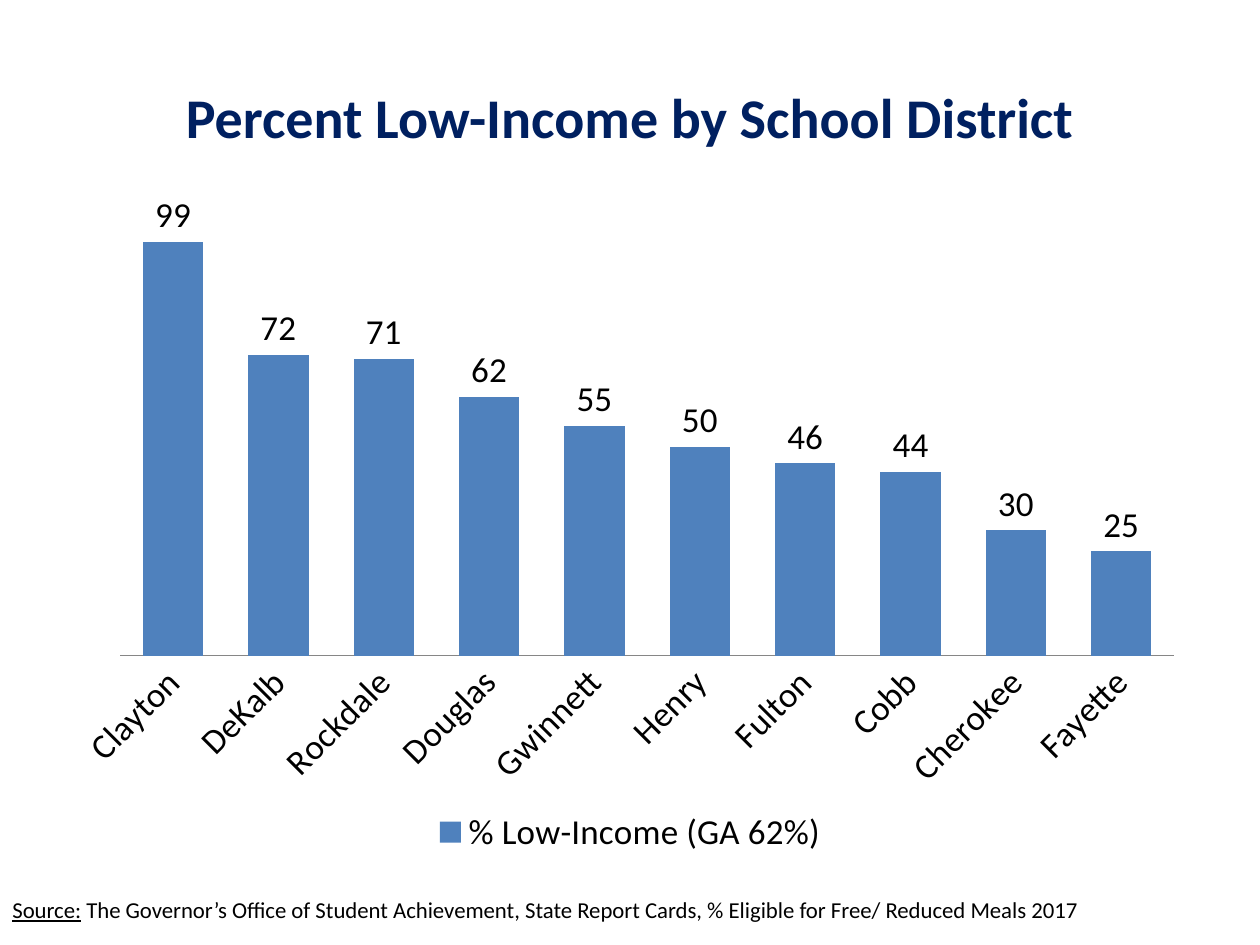
from lxml import etree
from pptx import Presentation
from pptx.chart.data import CategoryChartData
from pptx.dml.color import RGBColor
from pptx.enum.chart import (XL_CHART_TYPE as ChartType, XL_LABEL_POSITION as LabelPos,
                             XL_LEGEND_POSITION as LegendPos, XL_TICK_MARK as TickMark)
from pptx.enum.text import MSO_ANCHOR as Anchor, MSO_AUTO_SIZE as AutoSize, PP_ALIGN as Align
from pptx.oxml import parse_xml
from pptx.oxml.ns import nsdecls, qn
from pptx.util import Pt

NAVY = RGBColor(0x00, 0x20, 0x60)
BLACK = RGBColor(0x00, 0x00, 0x00)
BLUE = RGBColor(0x4F, 0x81, 0xBD)
GRAY = RGBColor(0x86, 0x86, 0x86)
FONT = "Calibri"

LOW_INCOME = {
    "Clayton": 99, "DeKalb": 72, "Rockdale": 71, "Douglas": 62, "Gwinnett": 55,
    "Henry": 50, "Fulton": 46, "Cobb": 44, "Cherokee": 30, "Fayette": 25,
}


def style_font(font, size, color=BLACK, bold=False, underline=False):
    font.name, font.size, font.bold = FONT, Pt(size), bold
    font.color.rgb = color
    if underline:
        font.underline = True


def add_text(slide, box, *runs, align=Align.LEFT, anchor=Anchor.TOP,
             spacing=None, autosize=AutoSize.NONE):
    """Each run is a pair: its text and its font format."""
    frame = slide.shapes.add_textbox(*map(Pt, box)).text_frame
    frame.word_wrap = True
    frame.auto_size = autosize
    frame.vertical_anchor = anchor
    paragraph = frame.paragraphs[0]
    paragraph.alignment = align
    paragraph.line_spacing = spacing
    for text, style in runs:
        run = paragraph.add_run()
        run.text = text
        style_font(run.font, **style)


def add_title(slide, box):
    add_text(slide, box,
             ("Percent Low-Income by School District", dict(size=32, color=NAVY, bold=True)),
             align=Align.CENTER, anchor=Anchor.MIDDLE)


def add_source(slide, box):
    add_text(slide, box,
             ("Source:", dict(size=13, underline=True)),
             (" The Governor’s Office of Student Achievement, State Report Cards, "
              "% Eligible for Free/ Reduced Meals 2017", dict(size=13)),
             spacing=0.6, autosize=AutoSize.SHAPE_TO_FIT_TEXT)


def set_plot_area(chart, x, y, w, h):
    """Fix the inner plot area, in fractions of the chart."""
    plot_area = chart.plots[0]._element.getparent()
    for layout in plot_area.findall(qn("c:layout")):
        plot_area.remove(layout)
    layout = parse_xml(f"<c:layout {nsdecls('c')}><c:manualLayout/></c:layout>")
    settings = dict(layoutTarget="inner", xMode="edge", yMode="edge", x=x, y=y, w=w, h=h)
    for name, value in settings.items():
        etree.SubElement(layout[0], qn(f"c:{name}")).set("val", str(value))
    plot_area.insert(0, layout)


def add_district_chart(slide, box):
    table = CategoryChartData(number_format="0")
    table.categories = list(LOW_INCOME)
    table.add_series("% Low-Income (GA 62%)", list(LOW_INCOME.values()))
    chart = slide.shapes.add_chart(ChartType.COLUMN_CLUSTERED, *map(Pt, box), table).chart
    chart.has_title = False
    style_font(chart.font, 20)
    set_plot_area(chart, 0.036, 0, 0.959, 0.71)

    # Columns and their values
    plot = chart.plots[0]
    plot.gap_width = 75
    plot.vary_by_categories = False
    fill = plot.series[0].format.fill
    fill.solid()
    fill.fore_color.rgb = BLUE
    plot.has_data_labels = True
    labels = plot.data_labels
    labels.show_value = True
    labels.number_format, labels.number_format_is_linked = "0", False
    labels.position = LabelPos.OUTSIDE_END
    style_font(labels.font, 20)

    # Axes
    districts, percent = chart.category_axis, chart.value_axis
    districts.major_tick_mark = TickMark.NONE
    districts.format.line.color.rgb = GRAY
    style_font(districts.tick_labels.font, 20)
    districts.tick_labels._element.txPr.bodyPr.set("rot", str(-45 * 60000))
    percent.minimum_scale, percent.maximum_scale = 0, 120
    percent.has_major_gridlines = False
    percent.visible = False

    # Legend
    chart.has_legend = True
    chart.legend.position = LegendPos.BOTTOM
    chart.legend.include_in_layout = False
    style_font(chart.legend.font, 20)


def build_slide(deck):
    slide = deck.slides.add_slide(deck.slide_layouts[6])
    add_title(slide, (36, 21.6, 648, 90))
    add_source(slide, (0, 514, 692, 18))
    add_district_chart(slide, (46, 88, 628, 404))


def main():
    deck = Presentation()
    deck.slide_width, deck.slide_height = Pt(720), Pt(540)
    build_slide(deck)
    deck.save("out.pptx")


if __name__ == "__main__":
    main()
